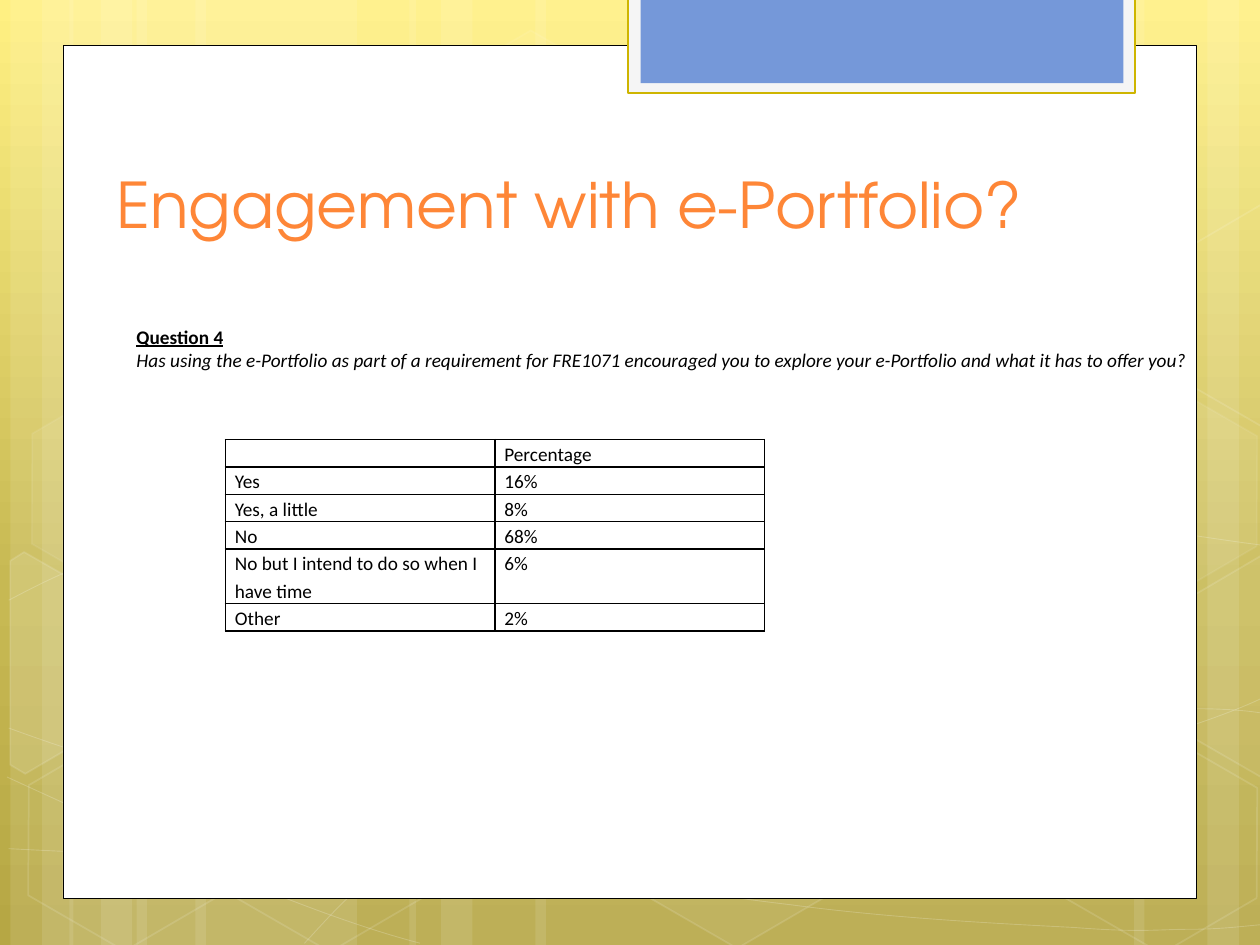
import copy
import math

import pptx
import pptx.dml.color
import pptx.enum.shapes
import pptx.enum.text
import pptx.oxml
import pptx.oxml.ns
import pptx.util
from lxml import etree

Pt = pptx.util.Pt
RGB = pptx.dml.color.RGBColor.from_string
qn = pptx.oxml.ns.qn
MSO = pptx.enum.shapes.MSO_SHAPE
COLORS = {"top": "FFF082", "middle": "C7B953", "bottom": "B6A744", "white": "FFFFFF",
          "black": "000000", "tab": "F5F5F5", "tab_line": "CEB500", "blue": "7598D9",
          "title": "FE8637"}


def paint(sp, fill=None, fill_alpha=100, line=None, width=1, line_alpha=100):
    """Set fill and line, each with an opacity in percent."""
    sp.shadow.inherit = False
    for fmt, color, alpha, place in ((sp.fill, fill, fill_alpha, "a:solidFill"),
                                     (sp.line.fill, line, line_alpha, "a:ln/a:solidFill")):
        if color is None:
            fmt.background()
            continue
        fmt.solid()
        fmt.fore_color.rgb = RGB(COLORS[color])
        if alpha < 100:
            clr = sp.element.spPr.xpath(place + "/a:srgbClr")[0]
            etree.SubElement(clr, qn("a:alpha")).set("val", str(alpha * 1000))
    if line:
        sp.line.width = Pt(width)


def add_outline(points, closed):
    """Draw a freeform through points given in points."""
    pts = [(Pt(x), Pt(y)) for x, y in points]
    fb = s.shapes.build_freeform(*pts[0])
    fb.add_line_segments(pts[1:], close=closed)
    return fb.convert_to_shape()


prs = pptx.Presentation()
prs.slide_width, prs.slide_height = Pt(720), Pt(540)
s = prs.slides.add_slide(prs.slide_layouts[5])

# Background gradient
fill = s.background.fill
fill.gradient()
fill.gradient_angle = 270
stops = s.element.find(".//" + qn("a:gsLst"))
stops.append(copy.deepcopy(stops[-1]))
for stop, color, pos in zip(fill.gradient_stops, ("top", "middle", "bottom"), (0, 0.62, 1)):
    stop.color.rgb = RGB(COLORS[color])
    stop.position = pos

# Vertical light bands
for x, w in ((78, 126), (6, 36), (24, 60), (111.6, 126), (39.6, 36), (57.6, 60),
             (528, 126), (690, 36), (648, 60), (306, 222), (234, 36), (252, 60)):
    sp = s.shapes.add_shape(MSO.RECTANGLE, Pt(x), 0, Pt(w), Pt(540))
    paint(sp, "white", 10)

# Sweeping curves: a start point, then per segment two control points and an end point,
# or only an end point where the segment is straight
curves = [
    ((5, 485), (44, 487, 83, 489, 137, 488), (191, 487, 258, 486, 330, 479),
     (402, 472, 504, 458, 570, 444), (636, 431, 703, 409, 725, 397)),
    ((5, 343), (26, 332, 47, 321, 87, 310), (128, 300, 186, 284, 250, 279),
     (314, 274, 392, 273, 471, 279), (550, 284, 682, 307, 725, 312)),
    ((4, 444), (91, 484, 178, 523, 240, 539)),
    ((5, 416), (27, 424, 50, 432, 92, 444), (134, 454, 197, 472, 257, 485),
     (317, 497, 392, 510, 452, 517), (512, 525, 576, 528, 614, 530),
     (652, 533, 662, 531, 680, 531), (699, 531, 712, 529, 725, 528)),
    ((174, 539), (187, 525, 200, 510, 217, 498), (235, 485, 259, 470, 279, 460),
     (300, 450, 312, 446, 338, 438), (364, 431, 413, 421, 438, 416),
     (464, 411, 467, 411, 490, 410), (512, 408, 547, 405, 572, 405),
     (597, 404, 638, 405, 638, 405), (686, 405), (699, 405, 711, 406, 718, 407),
     (724, 408, 722, 407, 724, 408)),
]
for start, *segments in curves:
    sp = add_outline([start] + [seg[-2:] for seg in segments], False)
    for step, seg in zip(sp.element.findall(".//" + qn("a:lnTo")), segments):
        if len(seg) == 2:
            continue
        step.tag = qn("a:cubicBezTo")
        for k in (0, 1):
            pt = etree.Element(qn("a:pt"))
            pt.set("x", str(Pt(seg[2 * k]) - sp.left))
            pt.set("y", str(Pt(seg[2 * k + 1]) - sp.top))
            step.insert(k, pt)
    paint(sp, line="white", width=0.5, line_alpha=20)

# Hexagons: left, top, fill opacity, line opacity
for x, y, fill_alpha, line_alpha in (
        (240.5, 26, 4, 8), (358, 424, 6, 12), (8, 425.5, 0, 12), (10, 224.6, 7, 8),
        (125.3, 426, 0, 12), (542, 326, 10, 12), (600.5, 427, 0, 12), (600.5, 226, 7, 8)):
    sp = s.shapes.add_shape(MSO.HEXAGON, Pt(x), Pt(y), Pt(126), Pt(109.4))
    sp.adjustments[0] = 0.285
    sp.rotation = 30
    paint(sp, "white" if fill_alpha else None, fill_alpha, "white", 1, line_alpha)

# Hexagons cut off by the slide edges, drawn upright around a centre and then turned
left_cut = [(5.8, 320.4), (13.7, 315.4), (69.1, 347), (68.4, 410.4), (14.4, 442.1), (5.8, 437)]
right_cut = [(666.7, 349.2), (720.7, 317.5), (726.5, 321.1), (726.5, 441.4), (721.4, 444.2),
             (666.7, 412.6)]
cos, sin = math.cos(math.radians(30)), math.sin(math.radians(30))
for outline, cx, cy, dy, fill_alpha in ((left_cut, 25.9, 385.2, 0, 10),
                                        (right_cut, 709.2, 374.4, 0, 4),
                                        (right_cut, 709.2, 374.4, -200.6, 0)):
    sp = add_outline([(cx + (x - cx) * cos + (y - cy) * sin,
                       cy + dy - (x - cx) * sin + (y - cy) * cos) for x, y in outline], True)
    sp.rotation = 30
    paint(sp, "white" if fill_alpha else None, fill_alpha, "white", 1, 12)

# White panel and the tab at its top
for x, y, w, h, color, line, width in (
        (36, 26, 648, 487.3, "white", "black", 0.5),
        (359, -1.5, 289.5, 54.7, "tab", "tab_line", 1.25),
        (366, -1.5, 276, 49, "blue", None, 0)):
    sp = s.shapes.add_shape(MSO.RECTANGLE, Pt(x), Pt(y), Pt(w), Pt(h))
    paint(sp, color, 100, line, width)

# Title, brought in front of the panel
sp = s.shapes.title
s.shapes.element.append(sp.element)
sp.left, sp.top, sp.width, sp.height = Pt(59.5), Pt(71.5), Pt(553), Pt(70)
tf = sp.text_frame
tf.word_wrap = True
tf.auto_size = pptx.enum.text.MSO_AUTO_SIZE.NONE
tf.vertical_anchor = pptx.enum.text.MSO_ANCHOR.BOTTOM
p = tf.paragraphs[0]
p.alignment = pptx.enum.text.PP_ALIGN.LEFT
r = p.add_run()
r.text = "Engagement with e-Portfolio?"
r.font.size, r.font.name = Pt(36), "TeX Gyre Adventor"
r.font.color.rgb = RGB(COLORS["title"])

# Answer table
rows = [("", "Percentage"), ("Yes", "16%"), ("Yes, a little", "8%"), ("No", "68%"),
        ("No but I intend to do so when I have time", "6%"), ("Other", "2%")]
table = s.shapes.add_table(len(rows), 2, Pt(128.8), Pt(251.2), Pt(308), Pt(93)).table
table.first_row = table.horz_banding = False
for i, row in enumerate(rows):
    table.rows[i].height = Pt(15.5)
    for j, text in enumerate(row):
        cell = table.cell(i, j)
        cell.margin_left = cell.margin_right = Pt(5.4)
        cell.margin_top = cell.margin_bottom = 0
        cell.fill.background()
        tcPr = cell._tc.get_or_add_tcPr()
        for k, side in enumerate(("lnL", "lnR", "lnT", "lnB")):
            tcPr.insert(k, pptx.oxml.parse_xml(
                f'<a:{side} xmlns:a="http://schemas.openxmlformats.org/drawingml/2006/main" '
                f'w="{Pt(1)}"><a:solidFill><a:srgbClr val="{COLORS["black"]}"/>'
                f'</a:solidFill></a:{side}>'))
        p = cell.text_frame.paragraphs[0]
        p.line_spacing = 1.15
        if not text:
            etree.SubElement(p._p, qn("a:endParaRPr")).set("sz", "1100")
            continue
        r = p.add_run()
        r.text = text
        r.font.size, r.font.name = Pt(11), "Calibri"
        r.font.color.rgb = RGB(COLORS["black"])

# Question
tf = s.shapes.add_textbox(Pt(70.9), Pt(181.1), Pt(720), Pt(36)).text_frame
tf.word_wrap = False
tf.auto_size = pptx.enum.text.MSO_AUTO_SIZE.SHAPE_TO_FIT_TEXT
tf.vertical_anchor = pptx.enum.text.MSO_ANCHOR.MIDDLE
for i, (text, heading) in enumerate((
        ("Question 4", True),
        ("Has using the e-Portfolio as part of a requirement for FRE1071 encouraged you "
         "to explore your e-Portfolio and what it has to offer you?", False))):
    p = tf.add_paragraph() if i else tf.paragraphs[0]
    p.alignment = pptx.enum.text.PP_ALIGN.LEFT
    r = p.add_run()
    r.text = text
    r.font.size, r.font.name = Pt(11), "Calibri"
    r.font.bold = r.font.underline = heading
    r.font.italic = not heading
    r.font.color.rgb = RGB(COLORS["black"])

prs.save("out.pptx")
